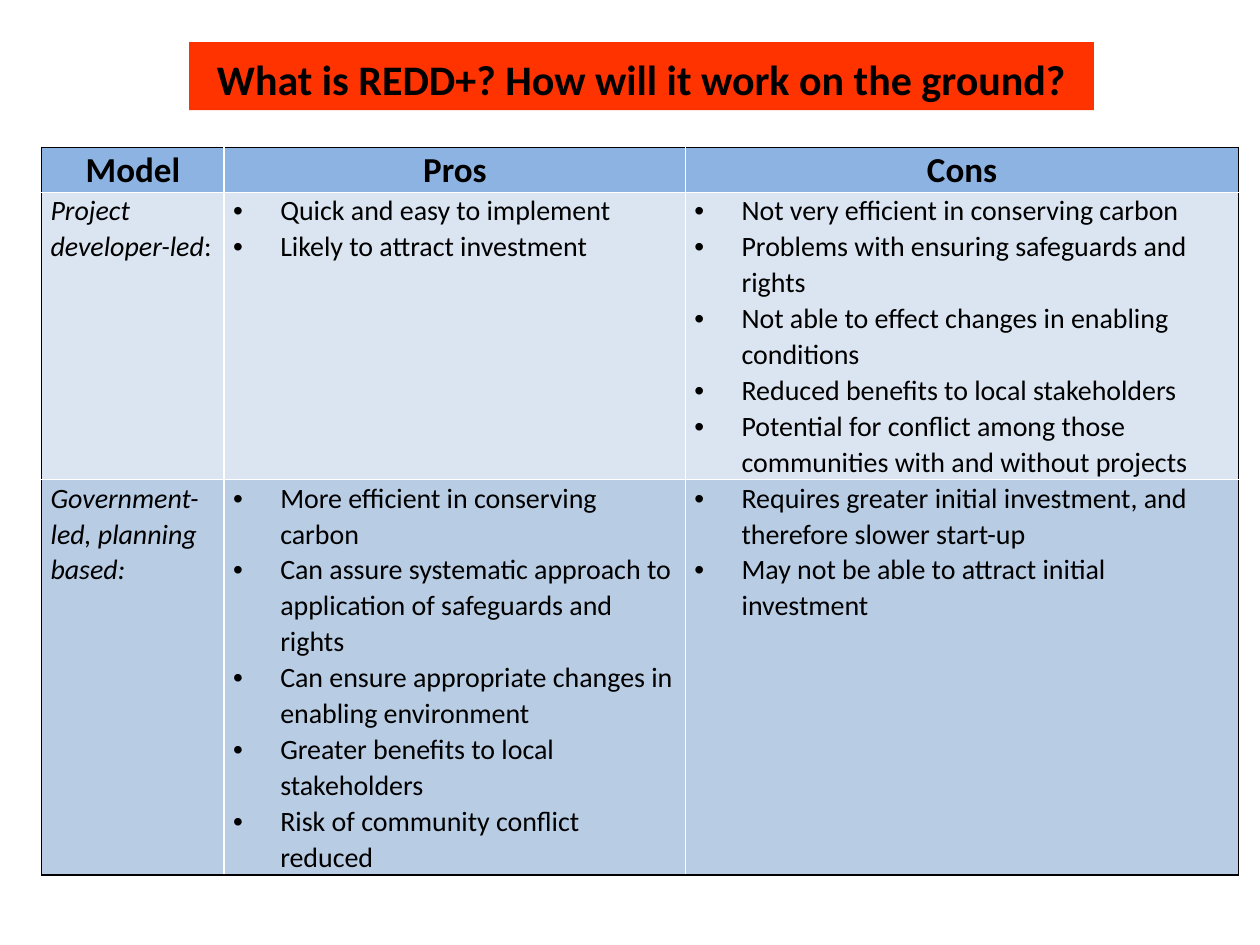
from lxml.etree import SubElement as Sub
from pptx import Presentation
from pptx.dml.color import RGBColor as RGB
from pptx.enum.text import MSO_ANCHOR as ANCHOR, MSO_AUTO_SIZE as AUTO, PP_ALIGN as ALIGN
from pptx.oxml.ns import qn
from pptx.util import Cm, Pt

# Content
TITLE = "What is REDD+? How will it work on the ground?"
HEADS = ["Model", "Pros", "Cons"]
MODELS = [
    {
        "name": [("Project developer-led", True), (":", False)],
        "pros": ["Quick and easy to implement", "Likely to attract investment"],
        "cons": [
            "Not very efficient in conserving carbon",
            "Problems with ensuring safeguards and rights",
            "Not able to effect changes in enabling conditions",
            "Reduced benefits to local stakeholders",
            "Potential for conflict among those communities with and without projects",
        ],
    },
    {
        "name": [("Government-led, planning based:", True)],
        "pros": [
            "More efficient in conserving carbon",
            "Can assure systematic approach to application of safeguards and rights",
            "Can ensure appropriate changes in enabling environment",
            "Greater benefits to local stakeholders",
            "Risk of community conflict reduced",
        ],
        "cons": [
            "Requires greater initial investment, and therefore slower start-up",
            "May not be able to attract initial investment",
        ],
    },
]

# Format
BLACK, WHITE, RED = RGB(0, 0, 0), RGB(255, 255, 255), RGB(0xFF, 0x33, 0)
FILLS = [RGB(0x8D, 0xB3, 0xE2), RGB(0xDB, 0xE5, 0xF1), RGB(0xB8, 0xCC, 0xE4)]
BASE = {"name": "Calibri"}
HEAD = {**BASE, "size": Pt(20), "bold": True}
BODY = {**BASE, "size": Pt(16), "bold": False}
COLS = [Cm(3.68), Cm(9.3), Cm(11.15)]
ROWS = [Cm(0.74), Cm(5.41), Cm(5.41)]
INDENT = Cm(0.95)


def style(item, form):
    for key, val in form.items():
        setattr(item, key, val)


def write(para, text, form, color=BLACK):
    run = para.add_run()
    run.text = text
    style(run.font, form)
    run.font.color.rgb = color


def bullet(para):
    props = para._p.get_or_add_pPr()
    props.set("marL", str(INDENT))
    props.set("indent", str(-INDENT))
    Sub(props, qn("a:buFont"), typeface="Arial")
    Sub(props, qn("a:buChar"), char="•")


def edge(cell, side, color):
    line = Sub(cell._tc.get_or_add_tcPr(), qn("a:ln" + side), w=str(Pt(1)))
    Sub(Sub(line, qn("a:solidFill")), qn("a:srgbClr"), val=str(color))


def frame(cell, row, col):
    """Black on the outside of the table, white between cells."""
    outer = {"L": col == 0, "R": col == len(COLS) - 1,
             "T": row == 0, "B": row == len(ROWS) - 1}
    for side, out in outer.items():
        edge(cell, side, BLACK if out else WHITE)
    cell.fill.solid()
    cell.fill.fore_color.rgb = FILLS[row]
    style(cell, {"margin_left": Cm(0.18), "margin_right": Cm(0.18),
                 "margin_top": 0, "margin_bottom": 0})


def fill_list(cell, items):
    for num, text in enumerate(items):
        para = cell.text_frame.add_paragraph() if num else cell.text_frame.paragraphs[0]
        bullet(para)
        para.line_spacing = 1.05
        write(para, text, BODY)


def main():
    prs = Presentation()
    prs.slide_width, prs.slide_height = Cm(25.4), Cm(19.05)
    slide = prs.slides.add_slide(prs.slide_layouts[5])

    # Title bar
    title = slide.shapes.title
    style(title, {"left": Cm(3.81), "top": Cm(0.85),
                  "width": Cm(18.24), "height": Cm(1.37)})
    title.fill.solid()
    title.fill.fore_color.rgb = RED
    style(title.text_frame, {"auto_size": AUTO.NONE, "word_wrap": True,
                             "vertical_anchor": ANCHOR.BOTTOM})
    para = title.text_frame.paragraphs[0]
    para.alignment = ALIGN.CENTER
    write(para, TITLE, {**HEAD, "size": Pt(24)})

    # Table grid
    table = slide.shapes.add_table(len(ROWS), len(COLS), Cm(0.84), Cm(2.97),
                                   sum(COLS), sum(ROWS)).table
    for col, width in zip(table.columns, COLS):
        col.width = width
    for row, height in enumerate(ROWS):
        table.rows[row].height = height
        for col in range(len(COLS)):
            frame(table.cell(row, col), row, col)

    # Header row
    for col, text in enumerate(HEADS):
        para = table.cell(0, col).text_frame.paragraphs[0]
        style(para, {"alignment": ALIGN.CENTER, "line_spacing": 1.05})
        write(para, text, HEAD)

    # Model rows
    for row, model in enumerate(MODELS, 1):
        para = table.cell(row, 0).text_frame.paragraphs[0]
        para.line_spacing = 1.05
        for text, slant in model["name"]:
            write(para, text, {**BODY, "italic": slant})
        fill_list(table.cell(row, 1), model["pros"])
        fill_list(table.cell(row, 2), model["cons"])

    prs.save("out.pptx")


if __name__ == "__main__":
    main()
